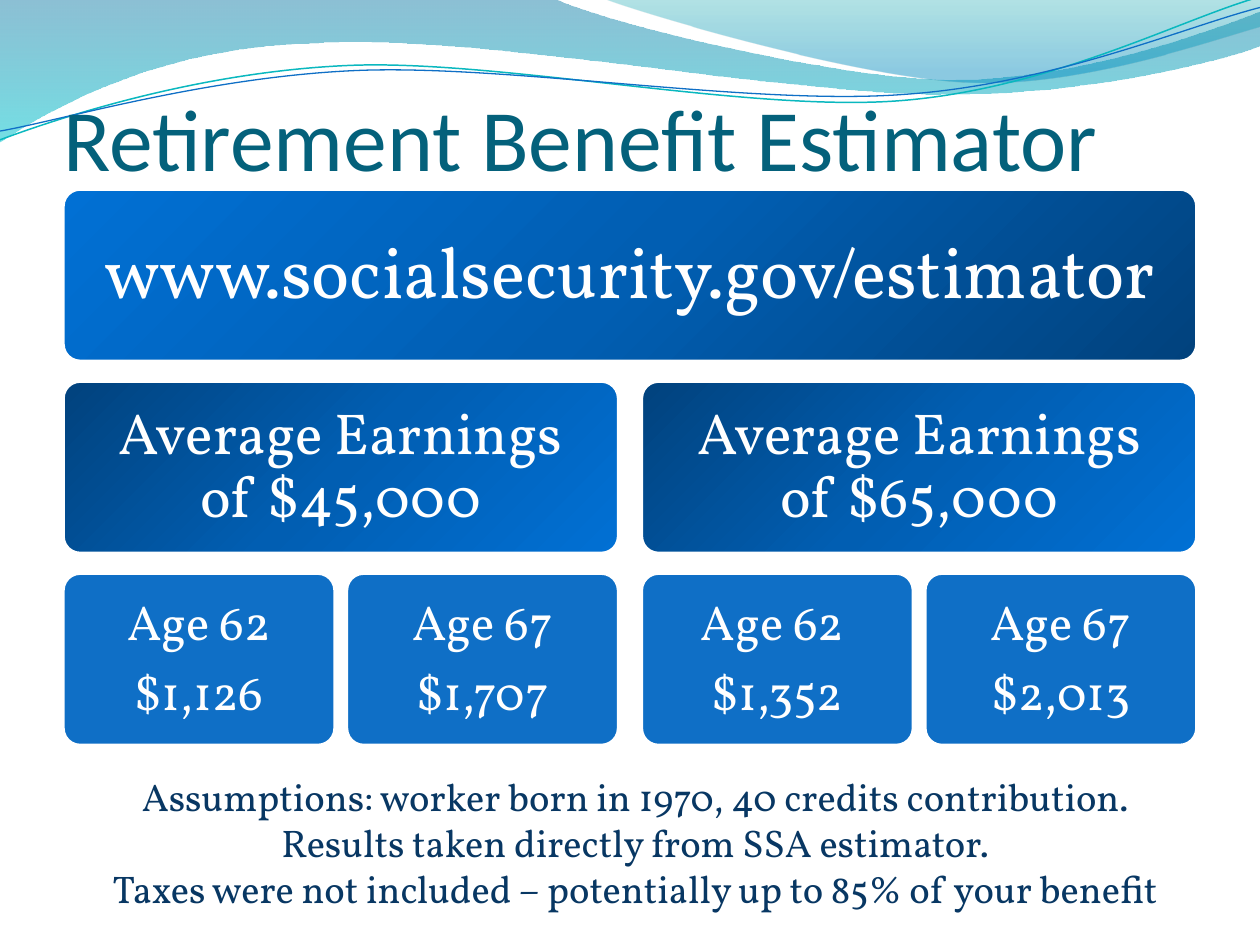
from dataclasses import dataclass
from math import cos, radians, sin

from lxml.etree import SubElement
from pptx import Presentation
from pptx.dml.color import RGBColor
from pptx.enum.shapes import MSO_SHAPE as Preset
from pptx.enum.text import MSO_ANCHOR as Anchor, MSO_AUTO_SIZE as AutoSize, PP_ALIGN as Align
from pptx.oxml.ns import qn
from pptx.util import Pt


@dataclass(frozen=True)
class Theme:
    title_font: str = "Calibri"
    body_font: str = "Vollkorn"
    title_size: float = 50
    address_size: float = 41
    earnings_size: float = 33
    age_size: float = 28
    note_size: float = 22
    title: str = "04617B"
    note: str = "083763"
    white: str = "FFFFFF"
    box: str = "0F6FC6"
    teal_line: str = "0AB8BF"
    # Gradient stops: position, colour, opacity (all in percent)
    box_gradient: tuple = ((0, "01427D", 100), (50, "015EB2", 100), (100, "0170D4", 100))
    wide_wave: tuple = ((0, "0074A1", 45), (100, "00C6CF", 55))
    right_wave: tuple = ((0, "00A1A9", 30), (80, "008BBF", 45))


THEME = Theme()

# Box grid
LEFT, TOP, WIDTH = 36, 108, 648
ROW_HEIGHT, ROW_STEP = 98.5, 109.75
COLUMN_GAP, AGE_GAP = 13, 6.5

EARNINGS = [
    ("Average Earnings of $45,000", [("Age 62", "$1,126"), ("Age 67", "$1,707")]),
    ("Average Earnings of $65,000", [("Age 62 ", "$1,352"), ("Age 67", "$2,013")]),
]
NOTES = [
    "Assumptions: worker born in 1970, 40 credits contribution.",
    "Results taken directly from SSA estimator.",
    "Taxes were not included – potentially up to 85% of your benefit",
]

# Waves: a start point, then line ends (2 numbers) or Bézier curves (6 numbers)
WIDE_WAVE = [(0, 0), (316.8, -0.7), (342.7, 12.2, 478.1, 45.4, 545.8, 45.4),
             (614.2, 45.4, 689.8, 18.7, 720, 6.5), (720.7, 25.9),
             (707.8, 31.7, 626.4, 54.7, 537.1, 54), (447.8, 54, 275, 20.2, 185, 24.5),
             (92.9, 25.9, 33.1, 59.8, -0.7, 81.4), (0, 0)]
RIGHT_WAVE = [(344.9, -0.7), (366.5, 7.9, 491, 44.6, 553.7, 46.8),
              (616.3, 49.7, 691.9, 23, 720, 15.1), (720, 0), (344.9, -0.7)]
TEAL_WAVE = [(0, 79.9), (34.6, 67, 113.8, 41, 199.4, 37.4),
             (284.4, 33.8, 427, 64.1, 513.4, 57.6), (599.8, 51.1, 675.4, 10.8, 718.6, -1.4)]
BLUE_WAVE = [(0, 74.9), (33.8, 69.1, 118.1, 43.9, 203.8, 40.3),
             (290.2, 36.7, 429.8, 60.5, 516.2, 54), (601.9, 48.2, 677.5, 15.1, 720, 4.3)]
LINE_TILT = -2.7


def set_text(shape, lines, *, size, color, font=THEME.body_font, align=Align.CENTER,
             anchor=Anchor.MIDDLE, insets=(7.2, 3.6, 7.2, 3.6), line_spacing=None, space_after=0):
    frame = shape.text_frame
    frame.word_wrap, frame.vertical_anchor = True, anchor
    frame.margin_left, frame.margin_top, frame.margin_right, frame.margin_bottom = map(Pt, insets)
    frame.text = "\n".join(lines)
    for paragraph in frame.paragraphs:
        paragraph.alignment = align
        paragraph.space_before, paragraph.space_after = Pt(0), Pt(space_after)
        paragraph.line_spacing = line_spacing
        text_font = paragraph.runs[0].font
        text_font.name, text_font.size = font, Pt(size)
        text_font.color.rgb = RGBColor.from_string(color)


def set_gradient(shape, stops, angle):
    """Fill with stops running clockwise from left to right by the angle."""
    shape.fill.gradient()
    shape.fill.gradient_angle = -angle % 360
    stop_list = shape._element.spPr.find(".//" + qn("a:gsLst"))
    stop_list.clear()
    for position, color, opacity in stops:
        stop = SubElement(stop_list, qn("a:gs"), pos=str(position * 1000))
        color_element = SubElement(stop, qn("a:srgbClr"), val=color)
        if opacity < 100:
            SubElement(color_element, qn("a:alpha"), val=str(opacity * 1000))


def set_line(shape, color, width):
    shape.line.color.rgb = RGBColor.from_string(color)
    shape.line.width = Pt(width)


def turn(point, center, angle):
    """Turn a point clockwise about the center."""
    x, y = point[0] - center[0], point[1] - center[1]
    cosine, sine = cos(radians(angle)), sin(radians(angle))
    return center[0] + x * cosine - y * sine, center[1] + x * sine + y * cosine


def add_wave(slide, segments, *, gradient=None, line=None, tilt=0, center=(0, 0)):
    points = [turn(pair, center, -tilt) for segment in segments
              for pair in zip(segment[::2], segment[1::2])]
    points = [(Pt(x), Pt(y)) for x, y in points]
    builder = slide.shapes.build_freeform(*points[0])
    builder.add_line_segments(points[1:], close=gradient is not None)
    wave = builder.convert_to_shape()
    wave.rotation = tilt % 360
    wave.shadow.inherit = False

    # Join each three points of a curve into one Bézier segment
    steps = iter(wave._element.spPr.findall(".//" + qn("a:lnTo")))
    for segment in segments[1:]:
        first = next(steps)
        if len(segment) == 6:
            curve = SubElement(first.getparent(), qn("a:cubicBezTo"))
            first.addprevious(curve)
            for step in (first, next(steps), next(steps)):
                curve.append(step[0])
                step.getparent().remove(step)

    if gradient:
        set_gradient(wave, gradient, 90)
        wave.line.fill.background()
    else:
        wave.fill.background()
        set_line(wave, *line)


def add_box(slide, lines, left, row, width, *, size, inset, angle=None):
    box = slide.shapes.add_shape(Preset.ROUNDED_RECTANGLE, Pt(left), Pt(TOP + row * ROW_STEP),
                                 Pt(width), Pt(ROW_HEIGHT))
    box.adjustments[0] = 0.1
    box.shadow.inherit = False
    if angle is None:
        box.fill.solid()
        box.fill.fore_color.rgb = RGBColor.from_string(THEME.box)
    else:
        set_gradient(box, THEME.box_gradient, angle)
    set_line(box, THEME.white, 2)
    set_text(box, lines, size=size, color=THEME.white, insets=(inset,) * 4,
             line_spacing=0.9, space_after=0.35 * size)


def add_title(slide, text):
    title = slide.shapes.title
    title.left, title.top, title.width, title.height = Pt(36), Pt(18), Pt(648), Pt(90)
    set_text(title, [text], size=THEME.title_size, color=THEME.title, font=THEME.title_font,
             align=Align.LEFT, anchor=Anchor.BOTTOM, insets=(0, 3.6, 0, 0))
    title.text_frame.auto_size = AutoSize.NONE
    # Bring the title in front of the waves
    slide.shapes._spTree.append(title._element)


def add_notes(slide):
    notes = slide.shapes.add_textbox(Pt(42), Pt(438), Pt(642), Pt(87))
    set_text(notes, NOTES, size=THEME.note_size, color=THEME.note, anchor=Anchor.TOP)
    notes.text_frame.auto_size = AutoSize.SHAPE_TO_FIT_TEXT


def main():
    presentation = Presentation()
    presentation.slide_width, presentation.slide_height = Pt(720), Pt(540)
    slide = presentation.slides.add_slide(presentation.slide_layouts[5])

    # Waves along the top
    add_wave(slide, WIDE_WAVE, gradient=THEME.wide_wave)
    add_wave(slide, RIGHT_WAVE, gradient=THEME.right_wave)
    add_wave(slide, TEAL_WAVE, line=(THEME.teal_line, 0.85), tilt=LINE_TILT, center=(359.3, 41.4))
    add_wave(slide, BLUE_WAVE, line=(THEME.box, 0.75), tilt=LINE_TILT, center=(359.6, 42.5))

    add_title(slide, "Retirement Benefit Estimator")

    # Address, earnings and ages, one row each
    add_box(slide, ["www.socialsecurity.gov/estimator"], LEFT, 0, WIDTH,
            size=THEME.address_size, inset=12.3, angle=225)
    column_width = (WIDTH - COLUMN_GAP) / 2
    age_width = (column_width - AGE_GAP) / 2
    for column, (earnings, ages) in enumerate(EARNINGS):
        left = LEFT + column * (column_width + COLUMN_GAP)
        add_box(slide, [earnings], left, 1, column_width,
                size=THEME.earnings_size, inset=9.9, angle=45)
        for index, lines in enumerate(ages):
            add_box(slide, lines, left + index * (age_width + AGE_GAP), 2, age_width,
                    size=THEME.age_size, inset=8.4)

    add_notes(slide)
    presentation.save("out.pptx")


if __name__ == "__main__":
    main()
